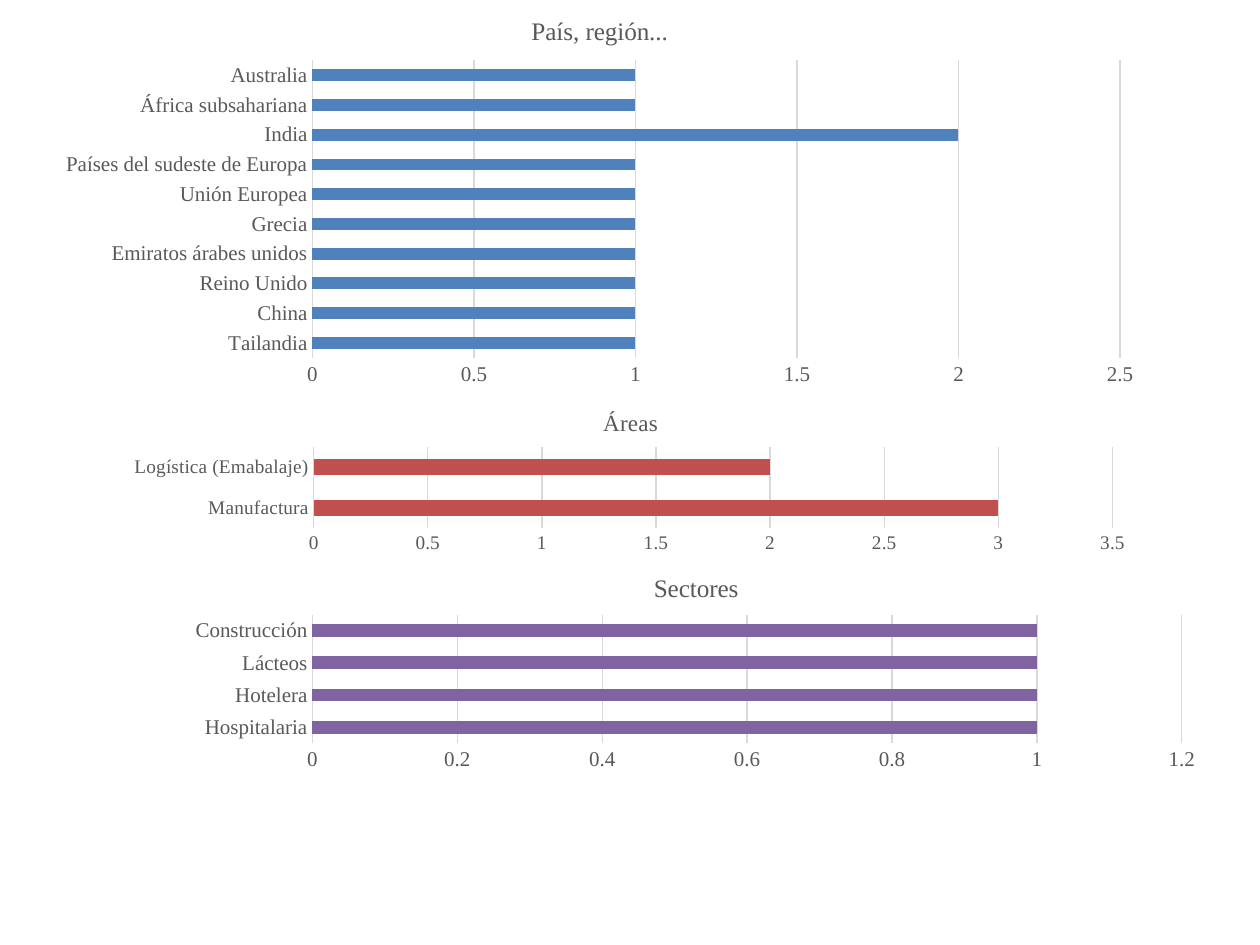
from lxml import etree
from pptx import Presentation
from pptx.chart.data import CategoryChartData
from pptx.dml.color import RGBColor
from pptx.enum.chart import XL_CHART_TYPE as ChartType, XL_TICK_MARK as TickMark
from pptx.oxml.ns import qn
from pptx.util import Inches, Pt

FONT = "Times New Roman"
GRAY, LIGHT_GRAY = "595959", "D9D9D9"


def style_font(font, size, color):
    font.name = FONT
    font.size = Pt(size)
    font.bold = False
    font.color.rgb = RGBColor.from_string(color)


def place_plot(chart, frame, plot):
    """Fix the inner plot area; frame and plot are left, top, width, height in inches."""
    area = chart._chartSpace.chart.plotArea
    for old in area.findall(qn("c:layout")):
        area.remove(old)
    layout = etree.Element(qn("c:layout"))
    manual = etree.SubElement(layout, qn("c:manualLayout"))
    settings = {
        "layoutTarget": "inner", "xMode": "edge", "yMode": "edge",
        "x": (plot[0] - frame[0]) / frame[2],
        "y": (plot[1] - frame[1]) / frame[3],
        "w": plot[2] / frame[2],
        "h": plot[3] / frame[3],
    }
    for name, value in settings.items():
        etree.SubElement(manual, qn(f"c:{name}")).set("val", str(value))
    area.insert(0, layout)


deck = Presentation()
deck.slide_width, deck.slide_height = Inches(10), Inches(7.5)
page = deck.slides.add_slide(deck.slide_layouts[6])

# title, frame, plot area, text size, title size, bar colour, axis maximum, axis step, values
charts = [
    ("País, región...", (0.35, -0.03, 8.82, 3.15), (2.48, 0.48, 6.41, 2.36),
     12, 14.4, "4F81BD", 2.5, 0.5,
     {"Tailandia": 1, "China": 1, "Reino Unido": 1, "Emiratos árabes unidos": 1,
      "Grecia": 1, "Unión Europea": 1, "Países del sudeste de Europa": 1,
      "India": 2, "África subsahariana": 1, "Australia": 1}),
    ("Áreas", (0.91, 3.12, 8.19, 1.3), (2.49, 3.55, 6.34, 0.64),
     11, 13.2, "C0504D", 3.5, 0.5,
     {"Manufactura": 3, "Logística (Emabalaje)": 2}),
    ("Sectores", (1.39, 4.42, 8.27, 1.73), (2.48, 4.88, 6.9, 1.02),
     12, 14.4, "8064A2", 1.2, 0.2,
     {"Hospitalaria": 1, "Hotelera": 1, "Lácteos": 1, "Construcción": 1}),
]

for title, frame, plot, size, title_size, color, maximum, step, values in charts:
    data = CategoryChartData()
    data.categories = list(values)
    data.add_series("Series 1", list(values.values()))
    chart = page.shapes.add_chart(
        ChartType.BAR_STACKED, *(Inches(length) for length in frame), data).chart
    style_font(chart.font, size, "000000")
    chart.has_legend = False

    chart.has_title = True
    span = chart.chart_title.text_frame.paragraphs[0].add_run()
    span.text = title
    style_font(span.font, title_size, GRAY)

    bars = chart.plots[0]
    bars.gap_width = 150
    bars.overlap = 100
    bars.vary_by_categories = False
    fill = bars.series[0].format.fill
    fill.solid()
    fill.fore_color.rgb = RGBColor.from_string(color)

    for axis in (chart.category_axis, chart.value_axis):
        axis.major_tick_mark = axis.minor_tick_mark = TickMark.NONE
        style_font(axis.tick_labels.font, size, GRAY)
    chart.category_axis.has_major_gridlines = False
    scale = chart.value_axis
    scale.minimum_scale, scale.maximum_scale, scale.major_unit = 0, maximum, step
    scale.has_major_gridlines = True
    scale.format.line.fill.background()
    for line in (chart.category_axis.format.line, scale.major_gridlines.format.line):
        line.width = Pt(0.75)
        line.color.rgb = RGBColor.from_string(LIGHT_GRAY)

    place_plot(chart, frame, plot)

deck.save("out.pptx")
